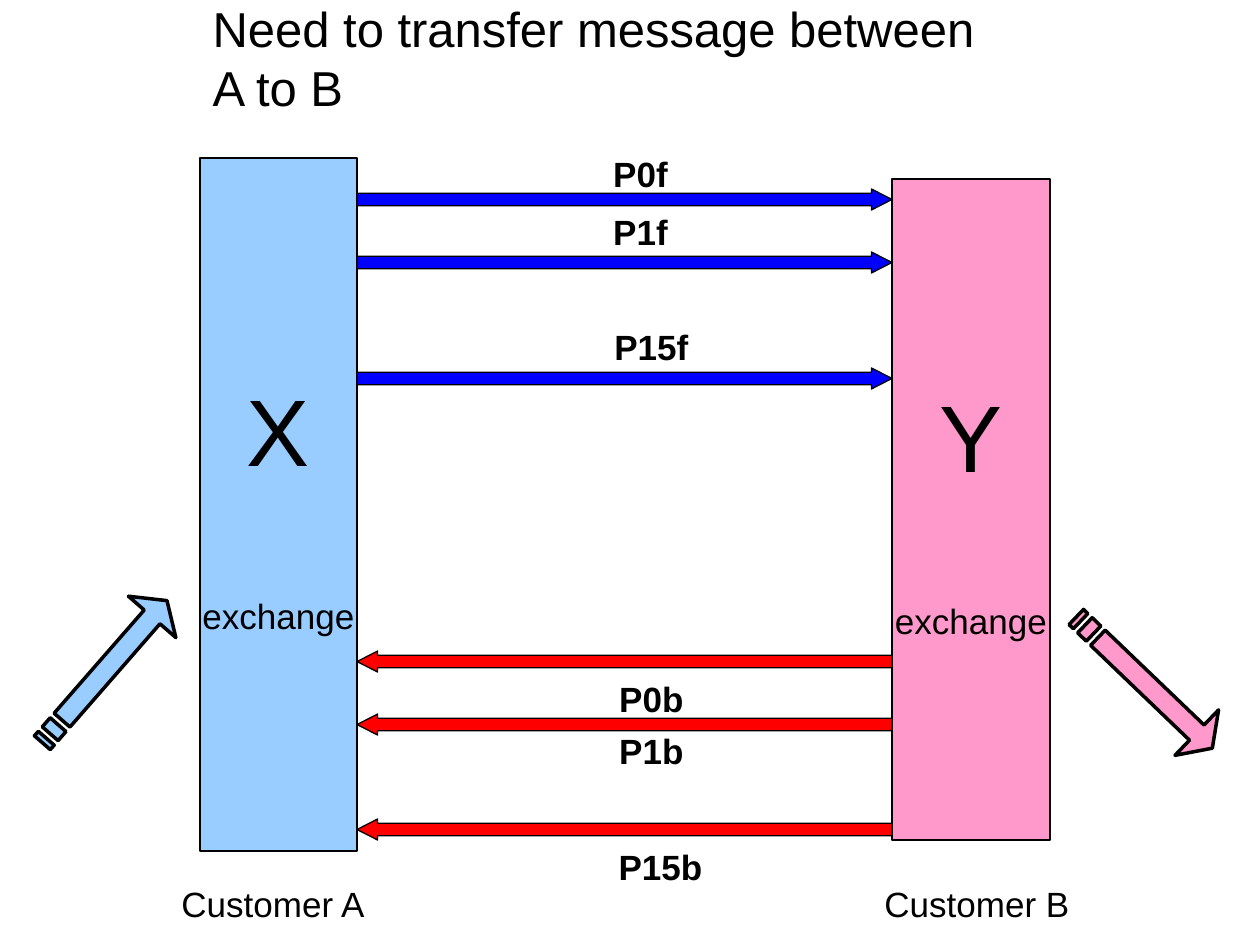
"""Build the slide on message transfer between exchanges X and Y."""
from typing import NamedTuple

from pptx import Presentation
from pptx import util as u
from pptx.dml.color import RGBColor
from pptx.enum import shapes, text

SCALE = 914400 / 126
COLORS = {
    "x": "99CCFF",
    "y": "FF99CC",
    "forward": "0000FF",
    "backward": "FF0000",
    "paper": "FFFFFF",
    "ink": "000000",
}
FONT = "Arial"
LINK_LEFT, LINK_WIDTH, LINK_HEIGHT = 357, 535, 21
STRIPED_ARROW = (
    ((167, 0), (167, 21), (30, 21), (30, 42), (167, 42), (167, 63), (189, 31.5)),
    ((12, 21), (12, 42), (24, 42), (24, 21)),
    ((0, 21), (0, 42), (6, 42), (6, 21)),
)


class Box(NamedTuple):
    left: int
    top: int
    width: int
    height: int


class Exchange(NamedTuple):
    letter: str
    box: Box
    color: str


class Link(NamedTuple):
    top: int
    color: str
    rotation: int


class Label(NamedTuple):
    wording: str
    box: Box


class Flow(NamedTuple):
    left: int
    top: int
    rotation: float
    color: str


EXCHANGES = (
    Exchange("X", Box(200, 158, 157, 693), "x"),
    Exchange("Y", Box(892, 179, 158, 661), "y"),
)
LINKS = (
    *(Link(top, "forward", 0) for top in (189, 252, 368)),
    *(Link(top, "backward", 180) for top in (651, 714, 819)),
)
PATH_LABELS = (
    Label("P0f", Box(609, 158, 63, 31)),
    Label("P1f", Box(609, 210, 63, 42)),
    Label("P15f", Box(620, 336, 63, 21)),
    Label("P0b", Box(620, 683, 63, 31)),
    Label("P1b", Box(620, 735, 63, 31)),
    Label("P15b", Box(608, 851, 105, 31)),
)
CUSTOMERS = (
    Label("Customer A", Box(168, 882, 210, 42)),
    Label("Customer B", Box(872, 882, 210, 42)),
)
FLOWS = (Flow(10, 640, 311.1, "x"), Flow(1050, 651, 43.8, "y"))


def px(length: float) -> u.Emu:
    """Turn pixels into EMU."""
    return u.Emu(round(length * SCALE))


def place(box: Box) -> tuple:
    """Give the box as EMU lengths."""
    return tuple(px(length) for length in box)


def paint(shape, fill: str, line_width: float = 0) -> None:
    """Set fill and outline and drop the shadow."""
    shape.shadow.inherit = False
    shape.fill.solid()
    shape.fill.fore_color.rgb = RGBColor.from_string(COLORS[fill])
    if line_width:
        shape.line.color.rgb = RGBColor.from_string(COLORS["ink"])
        shape.line.width = u.Pt(line_width)
    else:
        shape.line.fill.background()


def write(shape, wording: str, sizes: tuple, bold: bool = False,
          align=text.PP_ALIGN.CENTER) -> None:
    """Write one paragraph per size, unwrapped and vertically centred."""
    frame = shape.text_frame
    frame.text = wording
    frame.word_wrap = False
    frame.auto_size = text.MSO_AUTO_SIZE.NONE
    frame.vertical_anchor = text.MSO_ANCHOR.MIDDLE
    for paragraph, size in zip(frame.paragraphs, sizes):
        paragraph.alignment = align
        for run in paragraph.runs:
            run.font.name = FONT
            run.font.size = u.Pt(size)
            run.font.bold = bold
            run.font.color.rgb = RGBColor.from_string(COLORS["ink"])


def draw_exchange(slide, exchange: Exchange) -> None:
    """Draw one exchange tower with its letter."""
    tower = slide.shapes.add_shape(shapes.MSO_SHAPE.RECTANGLE, *place(exchange.box))
    paint(tower, exchange.color, 0.75)
    write(tower, f"{exchange.letter}\nexchange", (54, 20))
    tower.text_frame.paragraphs[1].space_before = u.Pt(62)


def draw_link(slide, link: Link) -> None:
    """Draw one path between the exchanges."""
    box = Box(LINK_LEFT, link.top, LINK_WIDTH, LINK_HEIGHT)
    arrow = slide.shapes.add_shape(shapes.MSO_SHAPE.RIGHT_ARROW, *place(box))
    arrow.adjustments[0] = 0.59
    arrow.adjustments[1] = 0.98
    arrow.rotation = link.rotation
    paint(arrow, link.color, 0.75)


def draw_path_label(slide, label: Label) -> None:
    """Draw the name of one path."""
    plate = slide.shapes.add_shape(shapes.MSO_SHAPE.RECTANGLE, *place(label.box))
    paint(plate, "paper")
    write(plate, label.wording, (20,), bold=True)


def draw_flow(slide, flow: Flow) -> None:
    """Draw a striped arrow into or out of an exchange."""
    first, *stripes = STRIPED_ARROW
    outline = slide.shapes.build_freeform(*first[0], scale=SCALE)
    outline.add_line_segments(first[1:], close=True)
    for stripe in stripes:
        outline.move_to(*stripe[0])
        outline.add_line_segments(stripe[1:], close=True)
    arrow = outline.convert_to_shape(px(flow.left), px(flow.top))
    arrow.rotation = flow.rotation
    paint(arrow, flow.color, 2)


def main() -> None:
    """Build and save the slide."""
    deck = Presentation()
    deck.slide_width, deck.slide_height = px(1260), px(945)
    slide = deck.slides.add_slide(deck.slide_layouts[5])
    for exchange in EXCHANGES:
        draw_exchange(slide, exchange)
    for link in LINKS:
        draw_link(slide, link)
    for label in PATH_LABELS:
        draw_path_label(slide, label)
    title = slide.shapes.title
    title.left, title.top, title.width, title.height = place(Box(200, 10, 819, 95))
    write(title, "Need to transfer message between A to B", (28,),
          align=text.PP_ALIGN.LEFT)
    for flow in FLOWS:
        draw_flow(slide, flow)
    for customer in CUSTOMERS:
        caption = slide.shapes.add_textbox(*place(customer.box))
        write(caption, customer.wording, (20,))
    deck.save("out.pptx")


if __name__ == "__main__":
    main()
